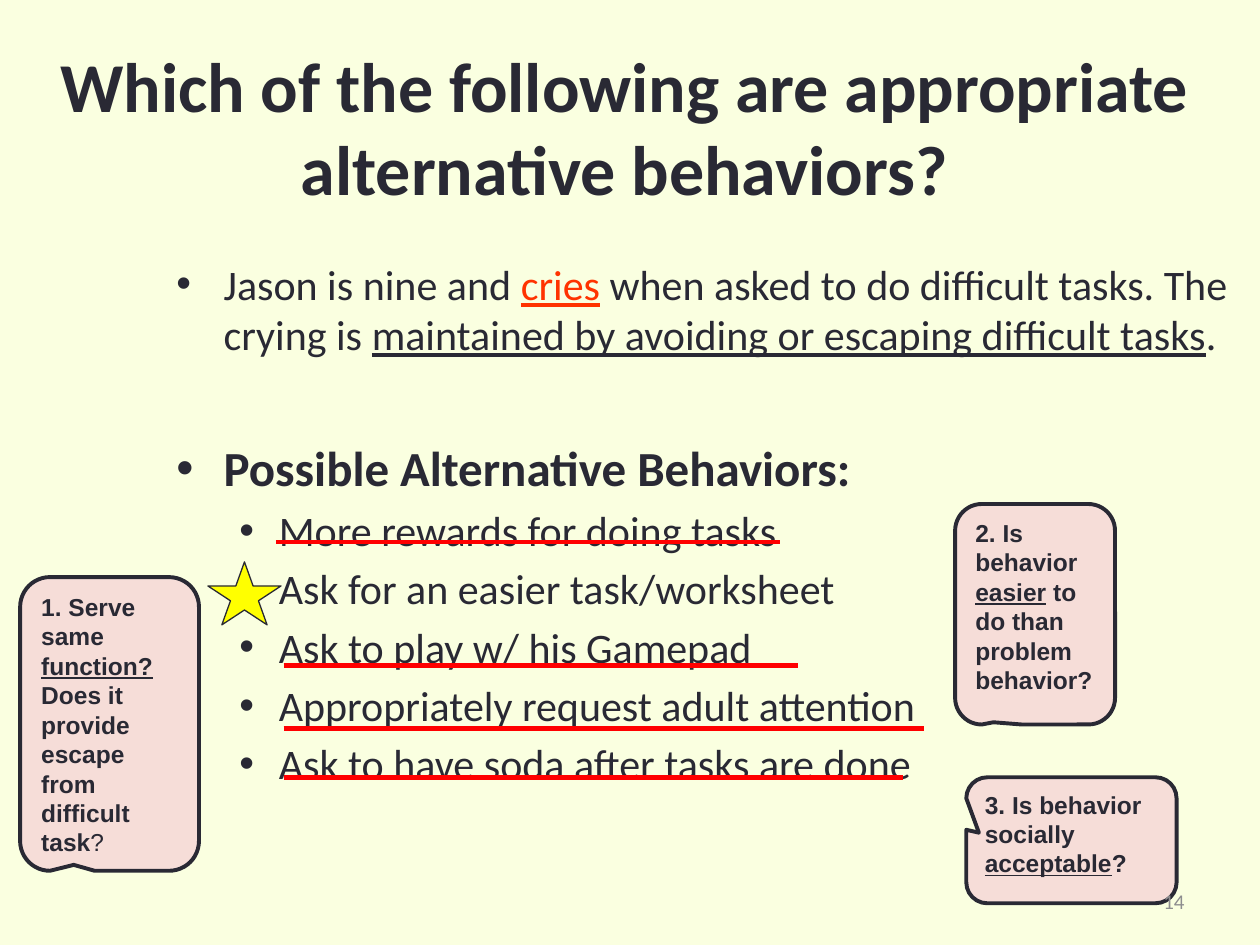
"""Build the slide on choosing appropriate alternative behaviors."""
from dataclasses import dataclass, field
from typing import Any, NamedTuple

import pptx
import pptx.dml.color
import pptx.enum.shapes
import pptx.enum.text
import pptx.oxml.ns
import pptx.util
from lxml import etree

Pt = pptx.util.Pt
Shapes = pptx.enum.shapes.MSO_SHAPE
Align = pptx.enum.text.PP_ALIGN
Anchor = pptx.enum.text.MSO_ANCHOR


@dataclass(frozen=True)
class Theme:
    background: str = "FAFFE0"
    ink: str = "292934"
    accent: str = "FF3300"
    strike: str = "FF0000"
    star: str = "FFFF00"
    callout: str = "F6DDD8"
    muted: str = "8D8D8F"
    heading_font: str = "Calibri"
    callout_font: str = "Arial"
    title_size: float = 40
    subhead_size: float = 28
    body_size: float = 24
    callout_size: float = 14
    number_size: float = 12


THEME = Theme()


class Box(NamedTuple):
    left: float
    top: float
    width: float
    height: float

    def lengths(self) -> list:
        return [Pt(value) for value in self]


class Run(NamedTuple):
    text: str
    formats: dict[str, Any] = {}
    color: str = THEME.ink


@dataclass(frozen=True)
class Bullet:
    runs: list[Run]
    level: int = 0
    size: float = THEME.body_size
    space_before: float = 4.5


@dataclass(frozen=True)
class Callout:
    box: Box
    tip: tuple[float, float]
    runs: list[Run] = field(default_factory=list)


class Strike(NamedTuple):
    left: float
    right: float
    y: float


UNDERLINE = {"underline": True}
BOLD = {"bold": True}
BOLD_UNDERLINE = BOLD | UNDERLINE
INDENTS = {0: (27, -27), 1: (58.5, -22.5)}

BULLETS = [
    Bullet([
        Run("Jason is nine and "),
        Run("cries", UNDERLINE, THEME.accent),
        Run(" when asked to do difficult tasks. The crying is "),
        Run("maintained by avoiding or escaping difficult tasks", UNDERLINE),
        Run("."),
    ]),
    Bullet([Run("Possible Alternative Behaviors:", BOLD)], size=THEME.subhead_size, space_before=45),
] + [
    Bullet([Run(text)], level=1)
    for text in (
        "More rewards for doing tasks",
        "Ask for an easier task/worksheet",
        "Ask to play w/ his Gamepad",
        "Appropriately request adult attention",
        "Ask to have soda after tasks are done",
    )
]

CALLOUTS = [
    Callout(Box(11.5, 329.8, 102.2, 167.8), (-0.2, 0.48), [
        Run("1. Serve same ", BOLD),
        Run("function?", BOLD_UNDERLINE),
        Run(" Does it provide escape from difficult task", BOLD),
        Run("?"),
    ]),
    Callout(Box(545.8, 288, 91.4, 126), (-0.26, 0.49), [
        Run("2. Is behavior ", BOLD),
        Run("easier", BOLD_UNDERLINE),
        Run(" to do than problem behavior?", BOLD),
    ]),
    Callout(Box(552.2, 444.2, 120.2, 72), (-0.44, -0.06), [
        Run("3. Is behavior socially ", BOLD),
        Run("acceptable", BOLD_UNDERLINE),
        Run("?", BOLD),
    ]),
]

STRIKES = [
    Strike(157.7, 445.7, 309.6),
    Strike(162, 527.8, 416.2),
    Strike(162, 516.2, 444.2),
    Strike(162, 455.8, 380.2),
]


def rgb(value: str) -> pptx.dml.color.RGBColor:
    return pptx.dml.color.RGBColor.from_string(value)


def apply(target: Any, formats: dict[str, Any]) -> None:
    for name, value in formats.items():
        setattr(target, name, value)


def add_runs(paragraph: Any, runs: list[Run], font: str, size: float) -> None:
    for item in runs:
        run = paragraph.add_run()
        run.text = item.text
        apply(run.font, {"name": font, "size": Pt(size)} | item.formats)
        run.font.color.rgb = rgb(item.color)


def place(shape: Any, box: Box) -> None:
    apply(shape, dict(zip(box._fields, box.lengths())))
    apply(shape.text_frame, {"word_wrap": True, "auto_size": pptx.enum.text.MSO_AUTO_SIZE.NONE})


def add_bullet(paragraph: Any, bullet: Bullet) -> None:
    apply(paragraph, {"level": bullet.level, "space_before": Pt(bullet.space_before)})
    margin, indent = INDENTS[bullet.level]
    properties = paragraph._p.get_or_add_pPr()
    properties.set("marL", str(Pt(margin)))
    properties.set("indent", str(Pt(indent)))
    etree.SubElement(properties, pptx.oxml.ns.qn("a:buChar"), char="•")
    add_runs(paragraph, bullet.runs, THEME.heading_font, bullet.size)


def add_filled_shape(slide: Any, kind: Any, box: Box, fill: str, line_width: float) -> Any:
    shape = slide.shapes.add_shape(kind, *box.lengths())
    shape.shadow.inherit = False
    shape.fill.solid()
    shape.fill.fore_color.rgb = rgb(fill)
    shape.line.color.rgb = rgb(THEME.ink)
    shape.line.width = Pt(line_width)
    return shape


def add_callout(slide: Any, callout: Callout) -> None:
    shape = add_filled_shape(slide, Shapes.ROUNDED_RECTANGULAR_CALLOUT, callout.box, THEME.callout, 2.25)
    shape.adjustments[0], shape.adjustments[1] = callout.tip
    apply(shape.text_frame, {"word_wrap": True, "vertical_anchor": Anchor.TOP})
    paragraph = shape.text_frame.paragraphs[0]
    paragraph.alignment = Align.LEFT
    add_runs(paragraph, callout.runs, THEME.callout_font, THEME.callout_size)


def add_strike(slide: Any, strike: Strike) -> None:
    connector = slide.shapes.add_connector(
        pptx.enum.shapes.MSO_CONNECTOR.STRAIGHT,
        Pt(strike.left), Pt(strike.y), Pt(strike.right), Pt(strike.y),
    )
    connector.line.color.rgb = rgb(THEME.strike)
    connector.line.width = Pt(2.5)
    etree.SubElement(connector._element.spPr, pptx.oxml.ns.qn("a:effectLst"))


def main() -> None:
    presentation = pptx.Presentation()
    apply(presentation, {"slide_width": Pt(720), "slide_height": Pt(540)})
    slide = presentation.slides.add_slide(presentation.slide_layouts[1])
    slide.background.fill.solid()
    slide.background.fill.fore_color.rgb = rgb(THEME.background)

    title, body = slide.shapes.title, slide.placeholders[1]
    place(title, Box(11.5, 24, 690.5, 96))
    title_run = Run("Which of the following are appropriate alternative behaviors?", BOLD)
    add_runs(title.text_frame.paragraphs[0], [title_run], THEME.heading_font, THEME.title_size)

    place(body, Box(93.6, 144, 626.4, 378))
    for index, bullet in enumerate(BULLETS):
        frame = body.text_frame
        add_bullet(frame.add_paragraph() if index else frame.paragraphs[0], bullet)

    for callout in CALLOUTS:
        add_callout(slide, callout)
    for strike in STRIKES:
        add_strike(slide, strike)
    add_filled_shape(slide, Shapes.STAR_5_POINT, Box(118.8, 321.1, 41.8, 36), THEME.star, 0.75)

    number_box = Box(516.2, 500.4, 167.8, 28.8)
    number = slide.shapes.add_textbox(*number_box.lengths())
    place(number, number_box)
    number.text_frame.vertical_anchor = Anchor.MIDDLE
    paragraph = number.text_frame.paragraphs[0]
    paragraph.alignment = Align.RIGHT
    add_runs(paragraph, [Run("14", color=THEME.muted)], THEME.heading_font, THEME.number_size)

    presentation.save("out.pptx")


if __name__ == "__main__":
    main()
